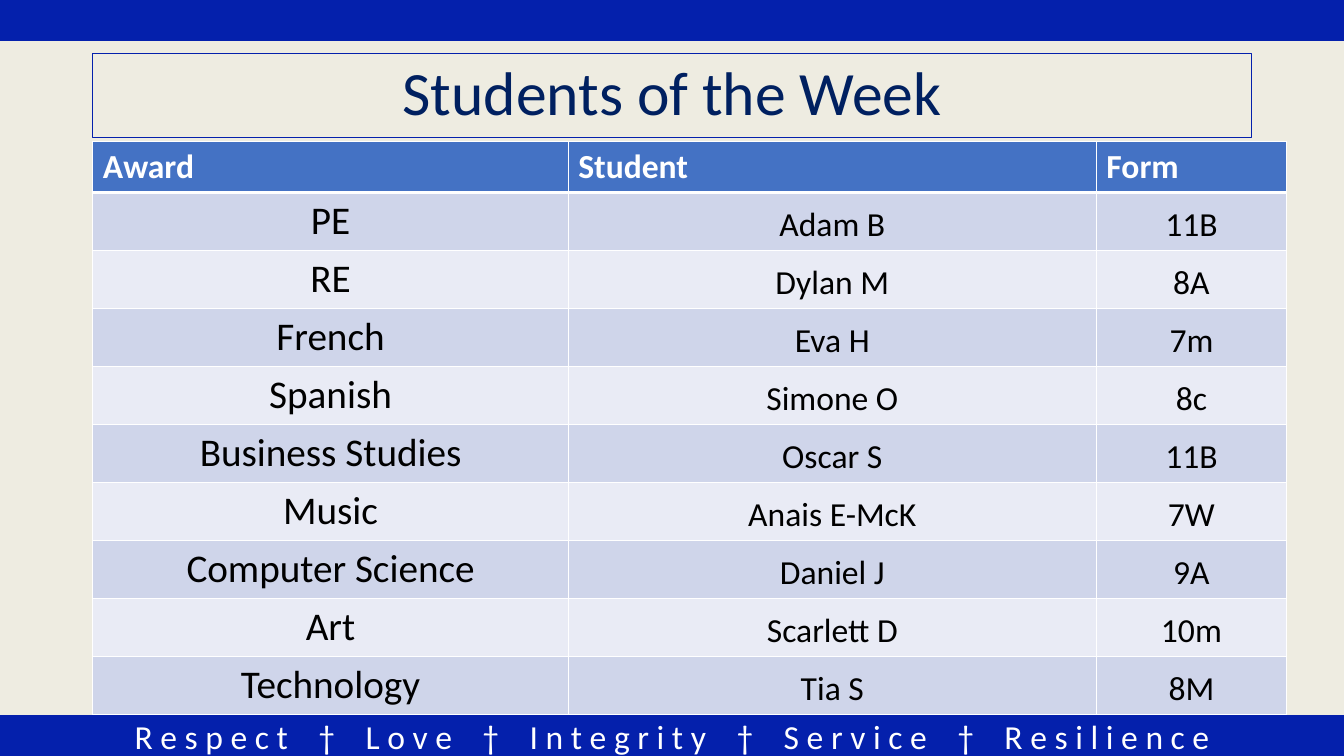
from dataclasses import dataclass

from lxml import etree
from pptx import Presentation
from pptx import util as u
from pptx.dml.color import RGBColor
from pptx.enum import shapes, text
from pptx.oxml import ns


@dataclass(frozen=True)
class Theme:
    font: str = "Calibri"
    page: str = "EEECE1"
    bar: str = "0420AC"
    title: str = "002060"
    head: str = "4472C4"
    bands: tuple = ("CFD5EA", "E9EBF5")
    white: str = "FFFFFF"
    black: str = "000000"
    big: int = 44
    mid: int = 28
    base: int = 24


LEFT, MID = text.PP_ALIGN.LEFT, text.PP_ALIGN.CENTER


def paint(fill, color):
    fill.solid()
    fill.fore_color.rgb = RGBColor.from_string(color)


def write(frame, *runs, font, size, color, bold=False, align=MID, lead=None):
    """Write runs into the first paragraph; a run is (words, letter gap in points)."""
    para = frame.paragraphs[0]
    para.alignment = align
    if lead:
        para.line_spacing = lead
    for words, gap in runs:
        run = para.add_run()
        run.text = words
        run.font.name, run.font.size, run.font.bold = font, u.Pt(size), bold
        run.font.color.rgb = RGBColor.from_string(color)
        if gap:
            run.font._element.set("spc", str(round(gap * 100)))


class Deck:
    def __init__(self, theme, width, height):
        self.theme = theme
        self.file = Presentation()
        self.file.slide_width, self.file.slide_height = u.Cm(width), u.Cm(height)
        self.slide = self.file.slides.add_slide(self.file.slide_layouts[6])
        paint(self.slide.background.fill, theme.page)

    def box(self, *place, fill=None, line=1):
        """Add a rectangle and return its text frame."""
        box = self.slide.shapes.add_shape(
            shapes.MSO_SHAPE.RECTANGLE, *map(u.Cm, place))
        box.shadow.inherit = False
        if fill:
            paint(box.fill, fill)
        else:
            box.fill.background()
        paint(box.line.fill, self.theme.bar)
        box.line.width = u.Pt(line)
        frame = box.text_frame
        frame.word_wrap = True
        frame.vertical_anchor = text.MSO_ANCHOR.MIDDLE
        return frame

    def edge(self, cell, **widths):
        """Draw white cell borders; widths are in points, in order L, R, T, B."""
        props = cell._tc.get_or_add_tcPr()
        for spot, (side, width) in enumerate(widths.items()):
            line = etree.Element(ns.qn(f"a:ln{side}"), w=str(u.Pt(width)))
            fill = etree.SubElement(line, ns.qn("a:solidFill"))
            etree.SubElement(fill, ns.qn("a:srgbClr"), val=self.theme.white)
            props.insert(spot, line)

    def table(self, left, top, cols, head, row, data):
        """Add a banded table whose first row is the heading."""
        t = self.theme
        highs = [head] + [row] * (len(data) - 1)
        grid = self.slide.shapes.add_table(
            len(data), len(cols),
            *map(u.Cm, (left, top, sum(cols), sum(highs)))).table
        grid.horz_banding = False
        for col, wide in zip(grid.columns, cols):
            col.width = u.Cm(wide)
        for r, (line, high) in enumerate(zip(data, highs)):
            grid.rows[r].height = u.Cm(high)
            for c, words in enumerate(line):
                cell = grid.cell(r, c)
                paint(cell.fill, t.bands[(r - 1) % 2] if r else t.head)
                self.edge(cell, L=1, R=1, T=1 if r != 1 else 3, B=1 if r else 3)
                if r and c:
                    cell.vertical_anchor = text.MSO_ANCHOR.BOTTOM
                    cell.margin_left = cell.margin_right = cell.margin_top = u.Cm(0.03)
                write(cell.text_frame, (words, 0), font=t.font,
                      size=t.mid if r and not c else t.base,
                      color=t.black if r else t.white,
                      bold=not r, align=MID if r else LEFT)


AWARDS = [
    ("Award", "Student", "Form"),
    ("PE", "Adam B", "11B"),
    ("RE", "Dylan M", "8A"),
    ("French", "Eva H", "7m"),
    ("Spanish", "Simone O", "8c"),
    ("Business Studies", "Oscar S", "11B"),
    ("Music", "Anais E-McK", "7W"),
    ("Computer Science", "Daniel J", "9A"),
    ("Art", "Scarlett D", "10m"),
    ("Technology", "Tia S", "8M"),
]
VALUES = ["Respect", "Love", "Integrity", "Service", "Resilience"]
WIDE, HIGH, BAR, EDGE = 33.87, 19.05, 1.02, 2.34


def main():
    t = Theme()
    deck = Deck(t, WIDE, HIGH)

    # Footer bar: spaced-out values with a wider gap round each dagger
    gap = (" ", 16.3)
    runs = []
    for value in VALUES:
        if runs:
            runs += [gap, ("†", 0), gap]
        runs.append((" ".join(value), 0))
    foot = deck.box(0, HIGH - BAR, WIDE, BAR, fill=t.bar)
    write(foot, *runs, font=t.font, size=t.base, color=t.white)

    # Top bar
    deck.box(0, 0, WIDE, BAR, fill=t.bar)

    # Title
    title = deck.box(EDGE, 1.35, 29.21, 2.11, line=0.75)
    write(title, ("Students of the Week", 0), font=t.font, size=t.big,
          color=t.title, lead=0.9)

    # Awards
    deck.table(EDGE, 3.56, (11.98, 13.31, 4.79), 1.29, 1.46, AWARDS)

    deck.file.save("out.pptx")


if __name__ == "__main__":
    main()
